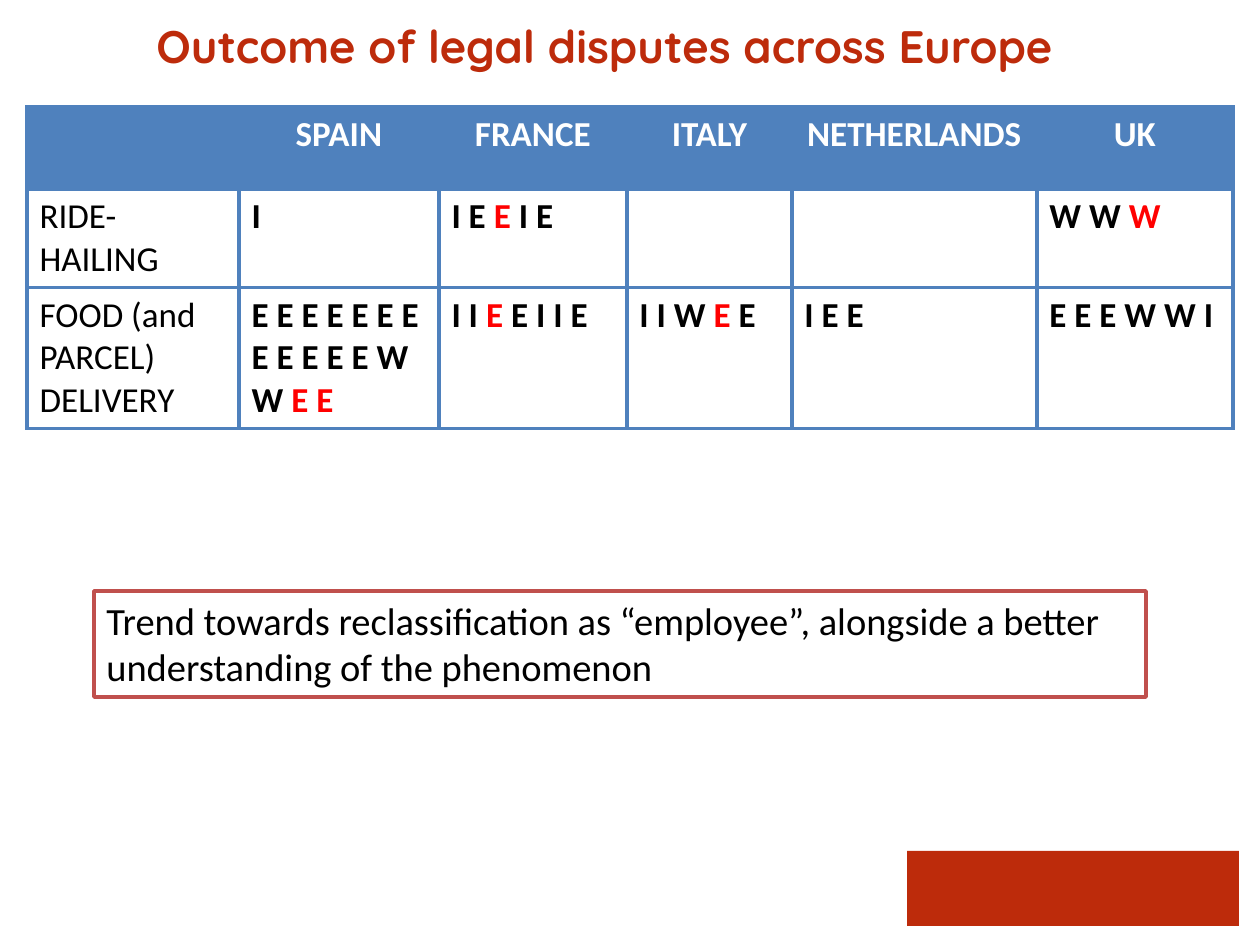
from lxml.etree import SubElement
from pptx import Presentation
from pptx.dml.color import RGBColor
from pptx.enum.shapes import MSO_SHAPE
from pptx.enum.text import MSO_ANCHOR, MSO_AUTO_SIZE, PP_ALIGN
from pptx.oxml.ns import qn
from pptx.util import Emu, Pt

PX_PER_INCH = 126
BRICK, BLUE, ROSE = "BD2B0B", "4F81BD", "C0504D"
BLACK, WHITE, RED = "000000", "FFFFFF", "FF0000"

COLUMN_WIDTHS = [212, 200, 188, 165, 245, 196]
ROW_HEIGHT = 82
ROWS = [
    ["", "SPAIN", "FRANCE", "ITALY", "NETHERLANDS", "UK"],
    ["RIDE-HAILING", "I", "I E *E* I E", "", "", "W W *W*"],
    ["FOOD (and PARCEL)\nDELIVERY", "E E E E E E E E E E E E W W *E E*",
     "I I *E *E I I E", "I I W *E* E", "I E E", "E E E W W I"],
]


def px(length):
    return Emu(round(length * 914400 / PX_PER_INCH))


def rgb(color):
    return RGBColor.from_string(color)


def write(frame, text, size=20, font="Calibri", color=BLACK, bold=False,
          align=PP_ALIGN.LEFT, line_spacing=None):
    for index, line in enumerate(text.split("\n")):
        paragraph = frame.add_paragraph() if index else frame.paragraphs[0]
        paragraph.alignment = align
        paragraph.space_before = Pt(0)
        if line_spacing:
            paragraph.line_spacing = Pt(line_spacing)
        for part, piece in enumerate(line.split("*")):
            if not piece:
                continue
            run = paragraph.add_run()
            run.text = piece
            run.font.size = Pt(size)
            run.font.name = font
            run.font.bold = bold
            run.font.color.rgb = rgb(RED if part % 2 else color)


def add_box(slide, left, top, width, height, fill, line=None):
    box = slide.shapes.add_shape(MSO_SHAPE.RECTANGLE, *map(px, (left, top, width, height)))
    box.shadow.inherit = False
    box.fill.solid()
    box.fill.fore_color.rgb = rgb(fill)
    if line:
        box.line.color.rgb = rgb(line)
        box.line.width = Pt(2)
    else:
        box.line.fill.background()
    return box


def place_title(slide, left, top, width, height):
    title = slide.shapes.title
    title.left, title.top, title.width, title.height = map(px, (left, top, width, height))
    frame = title.text_frame
    frame.auto_size = MSO_AUTO_SIZE.NONE
    frame.vertical_anchor = MSO_ANCHOR.TOP
    write(frame, "Outcome of legal disputes across Europe", size=26, font="Quicksand",
          color=BRICK, bold=True, align=PP_ALIGN.CENTER, line_spacing=22)


def add_borders(cell, color, width):
    properties = cell._tc.get_or_add_tcPr()
    for side in ("a:lnL", "a:lnR", "a:lnT", "a:lnB"):
        border = SubElement(properties, qn(side), w=str(Pt(width)))
        fill = SubElement(border, qn("a:solidFill"))
        SubElement(fill, qn("a:srgbClr"), val=color)


def add_outcomes(slide, left, top):
    table = slide.shapes.add_table(
        len(ROWS), len(COLUMN_WIDTHS), px(left), px(top),
        px(sum(COLUMN_WIDTHS)), px(ROW_HEIGHT * len(ROWS))).table
    table.horz_banding = False
    for column, width in zip(table.columns, COLUMN_WIDTHS):
        column.width = px(width)
    for row_index, texts in enumerate(ROWS):
        table.rows[row_index].height = px(ROW_HEIGHT)
        for column_index, text in enumerate(texts):
            cell = table.cell(row_index, column_index)
            add_borders(cell, BLUE, 2.25)
            cell.fill.solid()
            header = row_index == 0
            cell.fill.fore_color.rgb = rgb(BLUE if header else WHITE)
            write(cell.text_frame, text, bold=header or column_index > 0,
                  color=WHITE if header else BLACK,
                  align=PP_ALIGN.CENTER if header else PP_ALIGN.LEFT)


def add_conclusion(slide, left, top, width, height):
    box = add_box(slide, left, top, width, height, WHITE, ROSE)
    frame = box.text_frame
    frame.word_wrap = True
    frame.vertical_anchor = MSO_ANCHOR.TOP
    write(frame, "Trend towards reclassification as “employee”, alongside a better "
                 "understanding of the phenomenon", size=22)


def main():
    presentation = Presentation()
    presentation.slide_width, presentation.slide_height = px(1260), px(945)
    slide = presentation.slides.add_slide(presentation.slide_layouts[5])
    add_box(slide, 907, 851, 332, 75, BRICK)
    place_title(slide, 25, 28, 1160, 89)
    add_outcomes(slide, 27, 107)
    add_conclusion(slide, 94, 591, 1052, 106)
    presentation.save("out.pptx")


if __name__ == "__main__":
    main()
